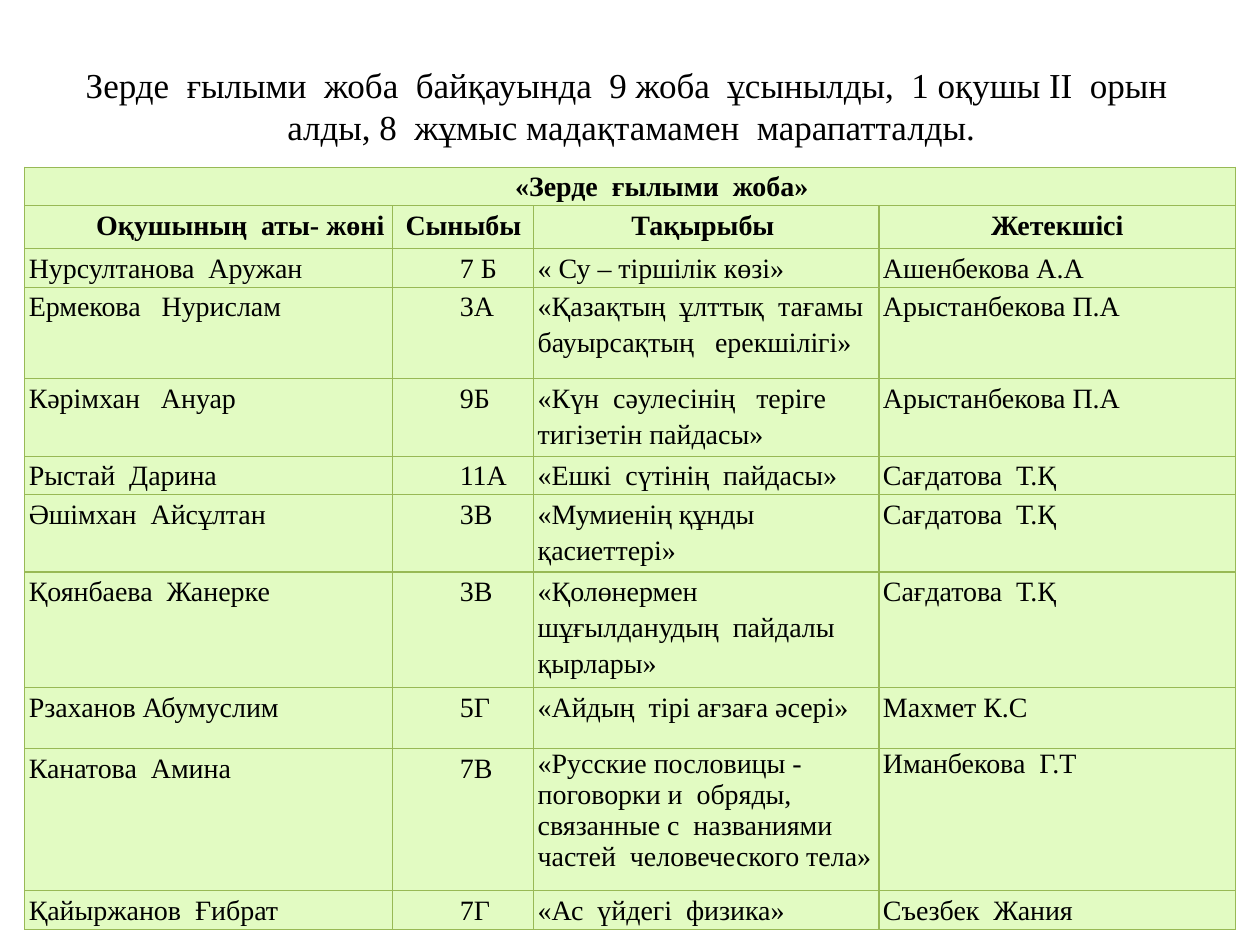
import pptx
import pptx.dml.color
import pptx.enum.text
import pptx.oxml
import pptx.oxml.ns
import pptx.util

Cm = pptx.util.Cm
Pt = pptx.util.Pt
ALIGN = pptx.enum.text.PP_ALIGN

BLACK = pptx.dml.color.RGBColor(0x00, 0x00, 0x00)
LIME = pptx.dml.color.RGBColor(0xE2, 0xFB, 0xC2)
GREEN = pptx.dml.color.RGBColor(0x98, 0xB9, 0x55)

INDENT = Cm(1.27)
SHIFTED = (INDENT, 0)
HANGING = (INDENT, -INDENT)
FLUSH = (0, 0)

HEADLINE = ("Зерде  ғылыми  жоба  байқауында  9 жоба  ұсынылды,  1 оқушы II  орын  "
            "алды, 8  жұмыс мадақтамамен  марапатталды.")
CONTEST = "«Зерде  ғылыми  жоба»"
HEADINGS = ["Оқушының  аты- жөні", "Сыныбы", "Тақырыбы ", "Жетекшісі"]
HEADING_INDENTS = [SHIFTED, HANGING, HANGING, HANGING]
PROJECTS = [
    ("Нурсултанова  Аружан", "7 Б", "« Су – тіршілік көзі»", "Ашенбекова А.А"),
    ("Ермекова   Нурислам", "3А", "«Қазақтың  ұлттық  тағамы  бауырсақтың   ерекшілігі»",
     "Арыстанбекова П.А"),
    ("Кәрімхан   Ануар", "9Б", "«Күн  сәулесінің   теріге  тигізетін пайдасы»",
     "Арыстанбекова П.А"),
    ("Рыстай  Дарина", "11А", "«Ешкі  сүтінің  пайдасы»", "Сағдатова  Т.Қ"),
    ("Әшімхан  Айсұлтан", "3В", "«Мумиенің құнды  қасиеттері»", "Сағдатова  Т.Қ"),
    ("Қоянбаева  Жанерке", "3В", "«Қолөнермен  шұғылданудың  пайдалы  қырлары»",
     "Сағдатова  Т.Қ"),
    ("Рзаханов Абумуслим", "5Г", "«Айдың  тірі ағзаға әсері»", "Махмет К.С"),
    ("Канатова  Амина", "7В",
     "«Русские пословицы - поговорки и  обряды, связанные с  названиями  частей  "
     "человеческого тела»", "Иманбекова  Г.Т"),
    ("Қайыржанов  Ғибрат", "7Г", "«Ас  үйдегі  физика»", "Съезбек  Жания"),
]
PROJECT_INDENTS = [HANGING, SHIFTED, FLUSH, HANGING]
SINGLE_SPACED = {(9, 2), (9, 3)}  # row and column of the tightly set cells
COLUMN_WIDTHS = [7.42, 2.84, 6.96, 7.19]
ROW_HEIGHTS = [0.74, 0.86, 0.74, 1.85, 1.52, 0.74, 1.52, 2.31, 1.22, 2.87, 0.74]


class SlideBuilder:
    """Holds the text style and the slide being filled."""

    font = {"name": "Times New Roman", "size": Pt(16), "bold": False}
    cell_format = {"margin_left": Cm(0.08), "margin_right": Cm(0.08),
                   "margin_top": 0, "margin_bottom": 0}

    def __init__(self, slide):
        self.slide = slide

    def add_words(self, frame, words, align, spacing=1.0, **changes):
        paragraph = frame.paragraphs[0]
        paragraph.alignment = align
        paragraph.line_spacing = spacing
        run = paragraph.add_run()
        run.text = words
        for key, value in {**self.font, **changes}.items():
            setattr(run.font, key, value)
        run.font.color.rgb = BLACK
        return paragraph

    def headline(self, words, left, top, width, height):
        frame = self.slide.shapes.add_textbox(left, top, width, height).text_frame
        frame.word_wrap = True
        frame.vertical_anchor = pptx.enum.text.MSO_ANCHOR.MIDDLE
        self.add_words(frame, words, ALIGN.CENTER, size=Pt(20))

    def table(self, left, top, widths, heights):
        grid = self.slide.shapes.add_table(
            len(heights), len(widths), left, top,
            Cm(sum(widths)), Cm(sum(heights))).table
        grid.first_row = grid.horz_banding = False
        for column, width in zip(grid.columns, widths):
            column.width = Cm(width)
        for row, height in zip(grid.rows, heights):
            row.height = Cm(height)
        for cell in grid.iter_cells():
            self.dress(cell)
        return grid

    def dress(self, cell):
        for key, value in self.cell_format.items():
            setattr(cell, key, value)
        properties = cell._tc.get_or_add_tcPr()
        for side in "LRTB":
            properties.append(pptx.oxml.parse_xml(
                f'<a:ln{side} {pptx.oxml.ns.nsdecls("a")} w="{Pt(0.75)}"><a:solidFill>'
                f'<a:srgbClr val="{GREEN}"/></a:solidFill></a:ln{side}>'))
        cell.fill.solid()
        cell.fill.fore_color.rgb = LIME

    def entry(self, cell, words, indents, align=ALIGN.LEFT, spacing=1.15, bold=False):
        paragraph = self.add_words(cell.text_frame, words, align, spacing, bold=bold)
        properties = paragraph._p.get_or_add_pPr()
        for key, value in zip(("marL", "indent"), indents):
            properties.set(key, str(int(value)))


def main():
    deck = pptx.Presentation()
    deck.slide_width, deck.slide_height = Cm(25.4), Cm(19.05)
    builder = SlideBuilder(deck.slides.add_slide(deck.slide_layouts[6]))

    # Headline
    builder.headline(HEADLINE, Cm(1.3), Cm(0.53), Cm(22.86), Cm(3.18))

    # Table with the contest name across the top
    results = builder.table(Cm(0.5), Cm(3.37), COLUMN_WIDTHS, ROW_HEIGHTS)
    results.cell(0, 0).merge(results.cell(0, 3))
    builder.entry(results.cell(0, 0), CONTEST, SHIFTED, ALIGN.CENTER, bold=True)

    # Column headings
    for column, (heading, indents) in enumerate(zip(HEADINGS, HEADING_INDENTS)):
        builder.entry(results.cell(1, column), heading, indents, ALIGN.CENTER, bold=True)

    # Projects
    for row, project in enumerate(PROJECTS, start=2):
        for column, (words, indents) in enumerate(zip(project, PROJECT_INDENTS)):
            spacing = 1.0 if (row, column) in SINGLE_SPACED else 1.15
            builder.entry(results.cell(row, column), words, indents, spacing=spacing)

    deck.save("out.pptx")


if __name__ == "__main__":
    main()
